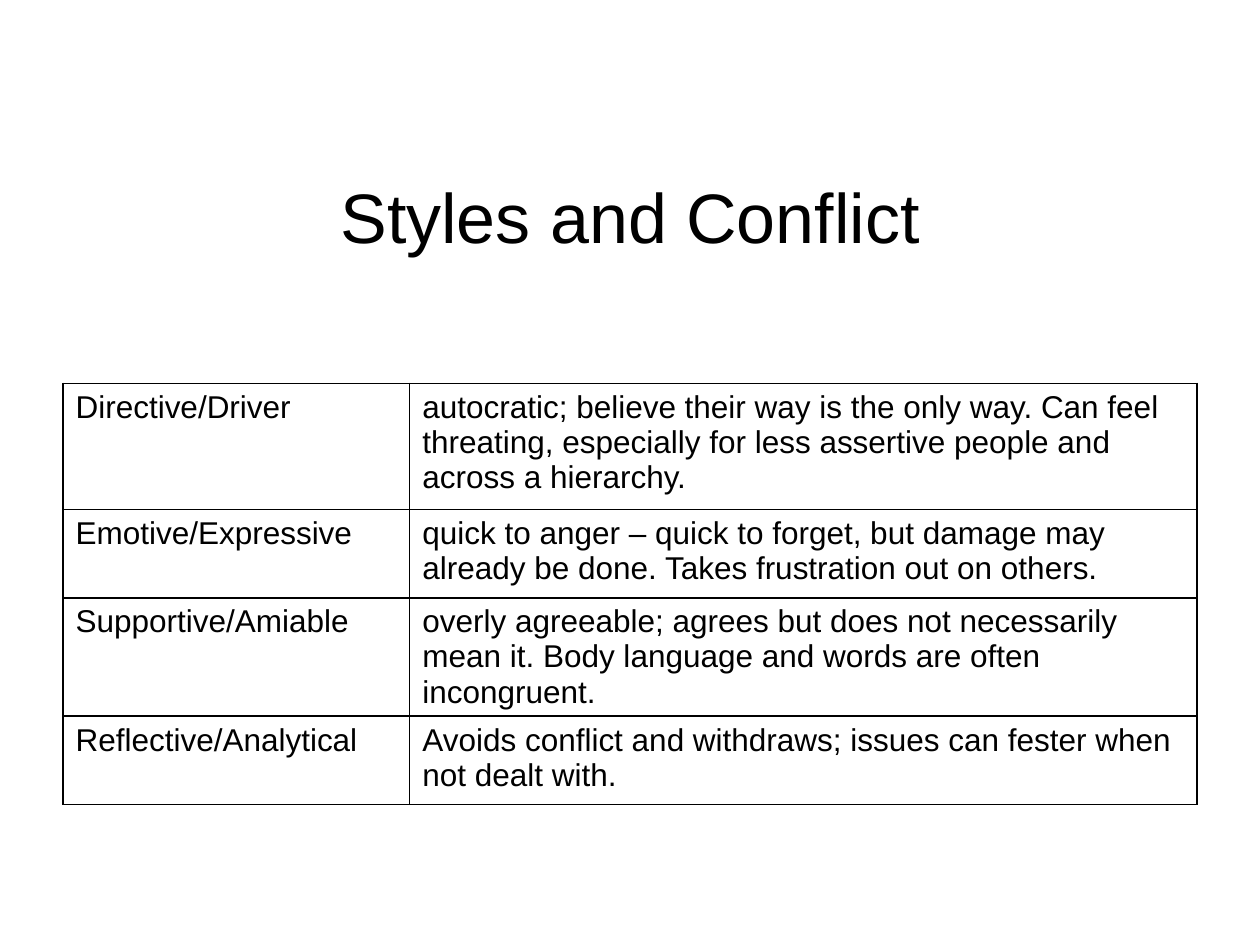
from lxml.etree import SubElement
from pptx import Presentation
from pptx.dml.color import RGBColor
from pptx.enum.text import MSO_ANCHOR as ANCHOR, PP_ALIGN as ALIGN
from pptx.oxml.ns import qn
from pptx.util import Cm, Pt

BLACK = RGBColor(0x00, 0x00, 0x00)
WHITE = RGBColor(0xFF, 0xFF, 0xFF)

COL_WIDTHS = [6.99, 15.87]
ROW_HEIGHTS = [2.54, 1.78, 1.78, 1.78]
STYLES = [
    ("Directive/Driver",
     "autocratic; believe their way is the only way. Can feel threating, "
     "especially for less assertive people and across a hierarchy."),
    ("Emotive/Expressive",
     "quick to anger – quick to forget, but damage may already be done. "
     "Takes frustration out on others."),
    ("Supportive/Amiable",
     "overly agreeable; agrees but does not necessarily mean it. "
     "Body language and words are often incongruent."),
    ("Reflective/Analytical",
     "Avoids conflict and withdraws; issues can fester when not dealt with."),
]


def write(tf, text, size, align):
    p = tf.paragraphs[0]
    p.alignment = align
    r = p.add_run()
    r.text = text
    for name, value in {"name": "Arial", "size": Pt(size), "bold": False}.items():
        setattr(r.font, name, value)
    r.font.color.rgb = BLACK


def add_borders(cell):
    tc_pr = cell._tc.get_or_add_tcPr()
    for i, side in enumerate(("a:lnL", "a:lnR", "a:lnT", "a:lnB")):
        ln = SubElement(tc_pr, qn(side), w=str(Pt(1)))
        fill = SubElement(ln, qn("a:solidFill"))
        SubElement(fill, qn("a:srgbClr"), val=str(BLACK))
        tc_pr.insert(i, ln)  # borders come before the cell fill


prs = Presentation()
prs.slide_width, prs.slide_height = Cm(25.4), Cm(19.05)
s = prs.slides.add_slide(prs.slide_layouts[5])

title = s.shapes.title
box = {"left": 1.27, "top": 2.97, "width": 22.86, "height": 2.74}
for name, value in box.items():
    setattr(title, name, Cm(value))
title.text_frame.vertical_anchor = ANCHOR.MIDDLE
write(title.text_frame, "Styles and Conflict", 40, ALIGN.CENTER)

table = s.shapes.add_table(len(STYLES), 2, Cm(1.27), Cm(7.73),
                           Cm(sum(COL_WIDTHS)), Cm(sum(ROW_HEIGHTS))).table
table.first_row = table.horz_banding = False
for col, width in zip(table.columns, COL_WIDTHS):
    col.width = Cm(width)

for row, height, texts in zip(table.rows, ROW_HEIGHTS, STYLES):
    row.height = Cm(height)
    for cell, text in zip(row.cells, texts):
        cell.fill.solid()
        cell.fill.fore_color.rgb = WHITE
        add_borders(cell)
        write(cell.text_frame, text, 18, ALIGN.LEFT)

prs.save("out.pptx")
